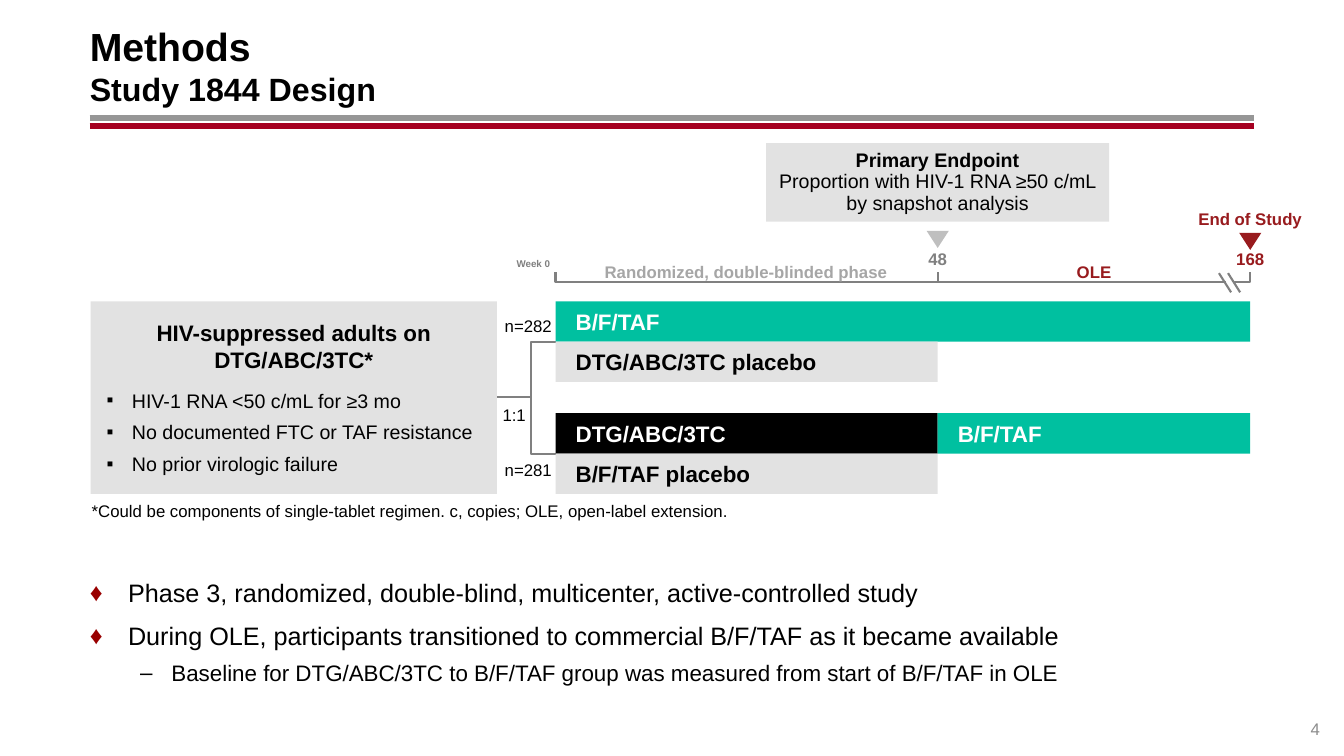
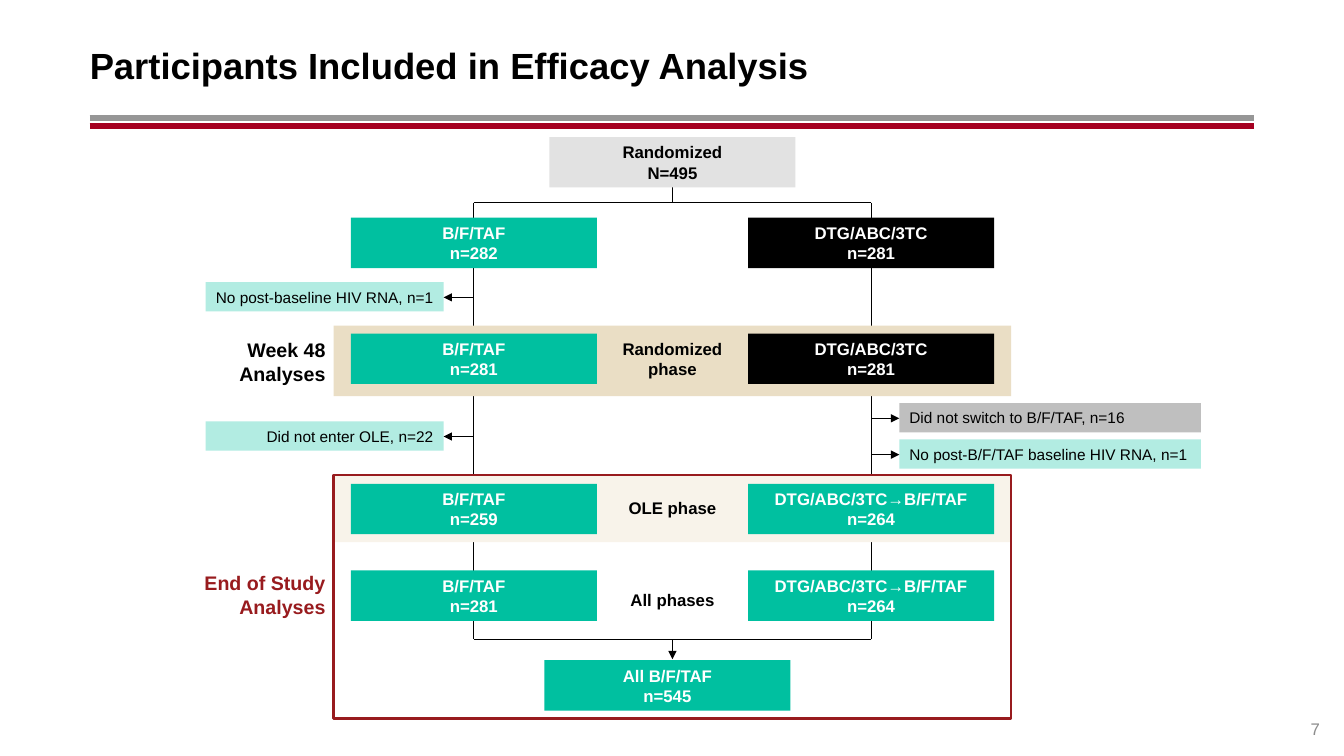
from lxml.etree import SubElement
from pptx import Presentation
from pptx.dml.color import RGBColor
from pptx.enum.shapes import MSO_CONNECTOR, MSO_SHAPE
from pptx.enum.text import MSO_ANCHOR, PP_ALIGN
from pptx.oxml.ns import qn
from pptx.util import Inches, Pt

FONT = "Arial"
COLORS = {
    "ink": "000000", "white": "FFFFFF", "teal": "00C0A0", "mint": "B2ECE2",
    "pale": "E2E2E2", "silver": "BFBFBF", "ash": "A6A6A6", "gray": "808080",
    "page": "8C8C8C", "rule": "969696", "crimson": "A50021", "red": "981B1E",
    "mark": "990000", "sand": "EADEC5", "cream": "F8F3EA",
}
ALIGN = {"l": PP_ALIGN.LEFT, "c": PP_ALIGN.CENTER, "r": PP_ALIGN.RIGHT}
ANCHOR = {"t": MSO_ANCHOR.TOP, "m": MSO_ANCHOR.MIDDLE, "b": MSO_ANCHOR.BOTTOM}
LEFT, RIGHT = 0.89, 12.44


def rgb(name):
    return RGBColor.from_string(COLORS[name])


def bullet(para, char, color, left, hang):
    props = para._p.get_or_add_pPr()
    props.set("marL", str(Inches(left)))
    props.set("indent", str(-Inches(hang)))
    tint = SubElement(props, qn("a:buClr"))
    SubElement(tint, qn("a:srgbClr"), val=COLORS[color])
    SubElement(props, qn("a:buFont"), typeface=FONT)
    SubElement(props, qn("a:buChar"), char=char)


def write(frame, text, size, color="ink", bold=False, align="l",
          before=0, after=0, pitch=1.0, mark=None):
    para = frame.add_paragraph() if frame.text else frame.paragraphs[0]
    para.text = text
    if mark:
        bullet(para, *mark)
    para.alignment = ALIGN[align]
    para.space_before, para.space_after = Pt(before), Pt(after)
    para.line_spacing = pitch
    font = para.font
    font.name, font.size, font.bold = FONT, Pt(size), bold
    font.color.rgb = rgb(color)


def setup(shape, anchor, pad):
    frame = shape.text_frame
    frame.word_wrap = True
    frame.vertical_anchor = ANCHOR[anchor]
    (frame.margin_left, frame.margin_top,
     frame.margin_right, frame.margin_bottom) = map(Inches, pad)
    return frame


def area(slide, at, anchor="m", pad=(0, 0.05, 0, 0.05)):
    return setup(slide.shapes.add_textbox(*map(Inches, at)), anchor, pad)


def label(slide, text, x, y, width, size=12, color="ink", bold=True, align="c"):
    frame = area(slide, (x - width / 2, y - 0.25, width, 0.5))
    write(frame, text, size, color, bold, align)


def box(slide, at, fill=None, line=None, pad=0.1, kind=MSO_SHAPE.RECTANGLE):
    shape = slide.shapes.add_shape(kind, *map(Inches, at))
    shape.shadow.inherit = False
    if fill:
        shape.fill.solid()
        shape.fill.fore_color.rgb = rgb(fill)
    else:
        shape.fill.background()
    if line:
        shape.line.color.rgb = rgb(line)
        shape.line.width = Pt(1.75)
    else:
        shape.line.fill.background()
    return setup(shape, "m", (pad, 0.05, 0.1, 0.05))


def pointer(slide, x, y, color):
    box(slide, (x - 0.11, y, 0.22, 0.17), color, kind=MSO_SHAPE.FLOWCHART_MERGE)


def line(slide, start, end, color="ink", width=0.75, arrow=False):
    link = slide.shapes.add_connector(
        MSO_CONNECTOR.STRAIGHT, *map(Inches, start + end))
    link.line.color.rgb = rgb(color)
    link.line.width = Pt(width)
    props = link._element.spPr
    if arrow:
        SubElement(props.find(qn("a:ln")), qn("a:tailEnd"), type="triangle")
    SubElement(props, qn("a:effectLst"))


def bracket(slide, points):
    start, *rest = [tuple(map(Inches, point)) for point in points]
    build = slide.shapes.build_freeform(*start)
    build.add_line_segments(rest, close=False)
    shape = build.convert_to_shape()
    shape.shadow.inherit = False
    shape.fill.background()
    shape.line.color.rgb = rgb("gray")
    shape.line.width = Pt(1.5)


def base(deck, number, *titles):
    slide = deck.slides.add_slide(deck.slide_layouts[6])
    for y, color in ((1.17, "rule"), (1.25, "crimson")):
        line(slide, (LEFT, y), (RIGHT, y), color, 4.25)
    frame = area(slide, (LEFT, 0.19, RIGHT - LEFT, 0.91))
    for text, size in titles:
        write(frame, text, size, bold=True)
    frame = area(slide, (RIGHT, 6.93, 0.65, 0.4), "b", (0, 0, 0, 0))
    write(frame, str(number), 12, "page", align="r")
    return slide


def bar(slide, text, x, y, end, fill, color):
    frame = box(slide, (x, y, end - x, 0.4), fill, pad=0.2)
    write(frame, text, 16, color, True)


def axis(slide, zero, switch, end):
    for left, right in ((zero, switch), (switch, end)):
        bracket(slide, [(right, 2.7), (right, 2.8), (left, 2.8), (left, 2.7)])
    box(slide, (12.16, 2.77, 0.08, 0.06), "white")
    for x in (12.09, 12.18):
        line(slide, (x, 2.71), (x + 0.12, 2.9), "gray", 1.5)
    pointer(slide, switch, 2.29, "silver")
    pointer(slide, end, 2.31, "red")
    label(slide, "Week 0", 5.29, 2.62, 0.6, 7, "gray")
    label(slide, "48", switch, 2.57, 0.4, color="gray")
    label(slide, "168", end, 2.57, 0.5, color="red")
    label(slide, "End of Study", end, 2.17, 1.24, color="red")
    label(slide, "Randomized, double-blinded phase", 7.4, 2.7, 3.04, color="ash")
    label(slide, "OLE", 10.85, 2.7, 0.55, color="red")


def design(deck):
    slide = base(deck, 4, ("Methods", 28), ("Study 1844 Design", 23))
    zero, switch, end = 5.51, 9.3, 12.4
    axis(slide, zero, switch, end)

    bracket(slide, [(zero, 4.5), (5.27, 4.5), (5.27, 3.39), (zero, 3.39)])
    line(slide, (4.93, 3.94), (5.27, 3.94), "gray", 1.5)
    for text, x, y in (("n=282", 5.24, 3.23), ("1:1", 5.1, 4.12),
                       ("n=281", 5.24, 4.66)):
        label(slide, text, x, y, 0.6, bold=False)

    for text, x, y, stop, fill, color in (
        ("B/F/TAF", zero, 2.99, end, "teal", "white"),
        ("DTG/ABC/3TC placebo", zero, 3.39, switch, "pale", "ink"),
        ("DTG/ABC/3TC", zero, 4.1, switch, "ink", "white"),
        ("B/F/TAF", switch, 4.1, end, "teal", "white"),
        ("B/F/TAF placebo", zero, 4.5, switch, "pale", "ink"),
    ):
        bar(slide, text, x, y, stop, fill, color)

    frame = box(slide, (0.9, 2.99, 4.03, 1.91), "pale")
    write(frame, "HIV-suppressed adults on\nDTG/ABC/3TC*", 16, bold=True,
          align="c", after=10.8)
    for text in ("HIV-1 RNA <50 c/mL for ≥3 mo",
                 "No documented FTC or TAF resistance",
                 "No prior virologic failure"):
        write(frame, text, 14, after=6, mark=("▪", "ink", 0.31, 0.25))

    frame = box(slide, (7.6, 1.42, 3.4, 0.78), "pale")
    write(frame, "Primary Endpoint", 14, bold=True, align="c", pitch=0.9)
    write(frame, "Proportion with HIV-1 RNA ≥50 c/mL by snapshot analysis",
          14, align="c", pitch=0.9)

    frame = area(slide, (0.91, 4.99, 6.6, 0.18), "t", (0, 0, 0, 0))
    write(frame, "*Could be components of single-tablet regimen. "
          "c, copies; OLE, open-label extension.", 12, pitch=0.9)

    frame = area(slide, (LEFT, 5.68, RIGHT - LEFT, 1.5), "t")
    for text in (
        "Phase 3, randomized, double-blind, multicenter, active-controlled study",
        "During OLE, participants transitioned to commercial B/F/TAF "
        "as it became available",
    ):
        write(frame, text, 18, before=9, mark=("♦", "mark", 0.38, 0.38))
    write(frame, "Baseline for DTG/ABC/3TC to B/F/TAF group was measured "
          "from start of B/F/TAF in OLE", 16, before=6,
          mark=("–", "ink", 0.81, 0.31))


def node(slide, name, count, x, y, fill="teal", color="white"):
    frame = box(slide, (x - 1.22, y, 2.44, 0.5), fill)
    for text in (name, count):
        write(frame, text, 12, color, True, "c")


def exits(slide, text, stem, y, fill="mint", left=False):
    x, width, tip = (2.04, 2.36, 4.4) if left else (8.92, 2.99, 8.92)
    frame = box(slide, (x, y, width, 0.29), fill)
    write(frame, text, 11, align="r" if left else "l")
    line(slide, (stem, y + 0.15), (tip, y + 0.15), arrow=True)


def flow(deck):
    slide = base(deck, 7, ("Participants Included in Efficacy Analysis", 26))
    west, mid, east = 4.7, 6.67, 8.64
    top, low = 2.01, 6.34
    for x in (west, east):
        line(slide, (x, top), (x, low))
    for y in (top, low):
        line(slide, (west, y), (east, y))
    line(slide, (mid, 1.86), (mid, top))
    line(slide, (mid, low), (mid, 6.54), arrow=True)

    box(slide, (3.31, 3.23, 6.72, 0.7), "sand")
    box(slide, (3.31, 4.71, 6.72, 0.67), "cream")

    node(slide, "Randomized", "N=495", mid, 1.36, "pale", "ink")
    both = "DTG/ABC/3TC→B/F/TAF"
    for y, first, name, second, fill in (
        (2.16, "n=282", "DTG/ABC/3TC", "n=281", "ink"),
        (3.31, "n=281", "DTG/ABC/3TC", "n=281", "ink"),
        (4.8, "n=259", both, "n=264", "teal"),
        (5.66, "n=281", both, "n=264", "teal"),
    ):
        node(slide, "B/F/TAF", first, west, y)
        node(slide, name, second, east, y, fill)
    node(slide, "All B/F/TAF", "n=545", 6.62, 6.55)

    exits(slide, "No post-baseline HIV RNA, n=1", west, 2.8, left=True)
    exits(slide, "Did not enter OLE, n=22", west, 4.18, left=True)
    exits(slide, "Did not switch to B/F/TAF, n=16", east, 4, "silver")
    exits(slide, "No post-B/F/TAF baseline HIV RNA, n=1", east, 4.36)

    for text, y in (("Randomized\nphase", 3.56), ("OLE phase", 5.04),
                    ("All phases", 5.95)):
        label(slide, text, mid, y, 1.4)
    for text, y, color in (("Week 48\nAnalyses", 3.59, "ink"),
                           ("End of Study\nAnalyses", 5.9, "red")):
        label(slide, text, 2.43, y, 1.6, 14, color, align="r")
    box(slide, (3.31, 4.71, 6.72, 2.42), line="red")


def main():
    deck = Presentation()
    deck.slide_width, deck.slide_height = Inches(13.33), Inches(7.5)
    design(deck)
    flow(deck)
    deck.save("out.pptx")


if __name__ == "__main__":
    main()
